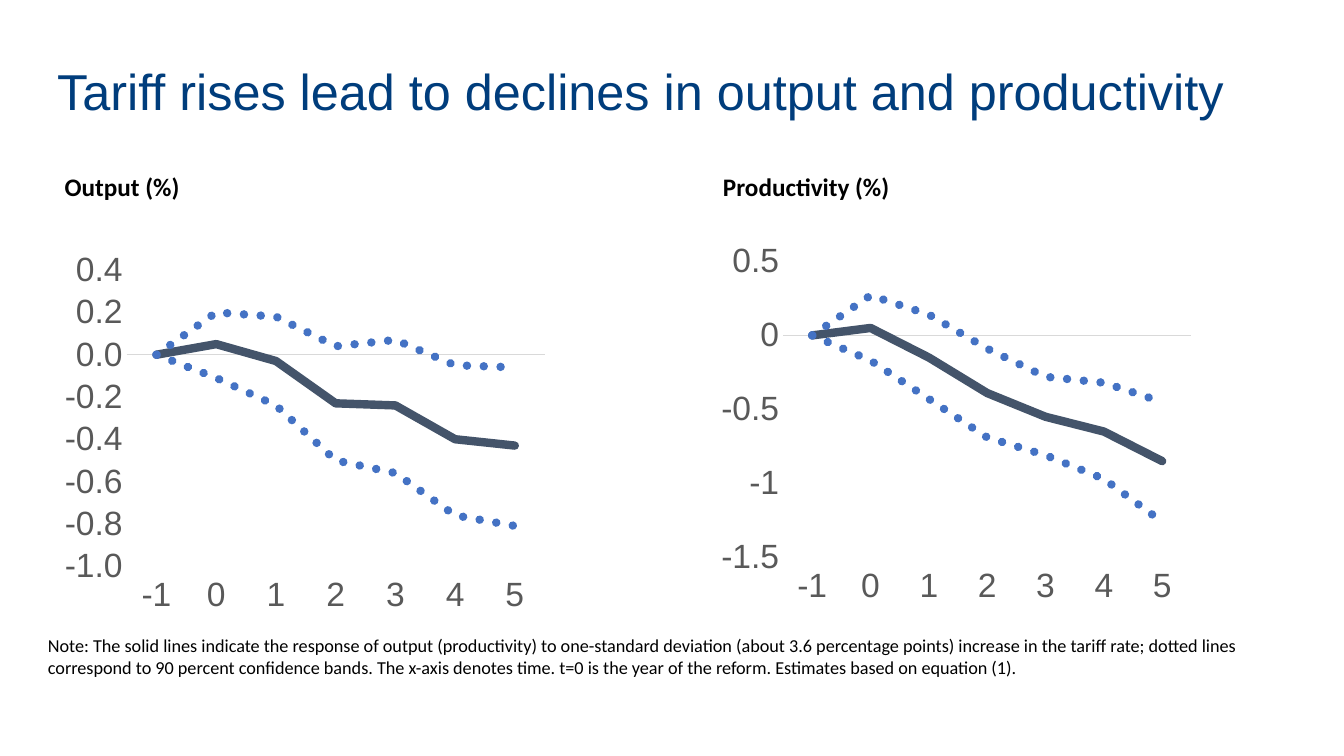
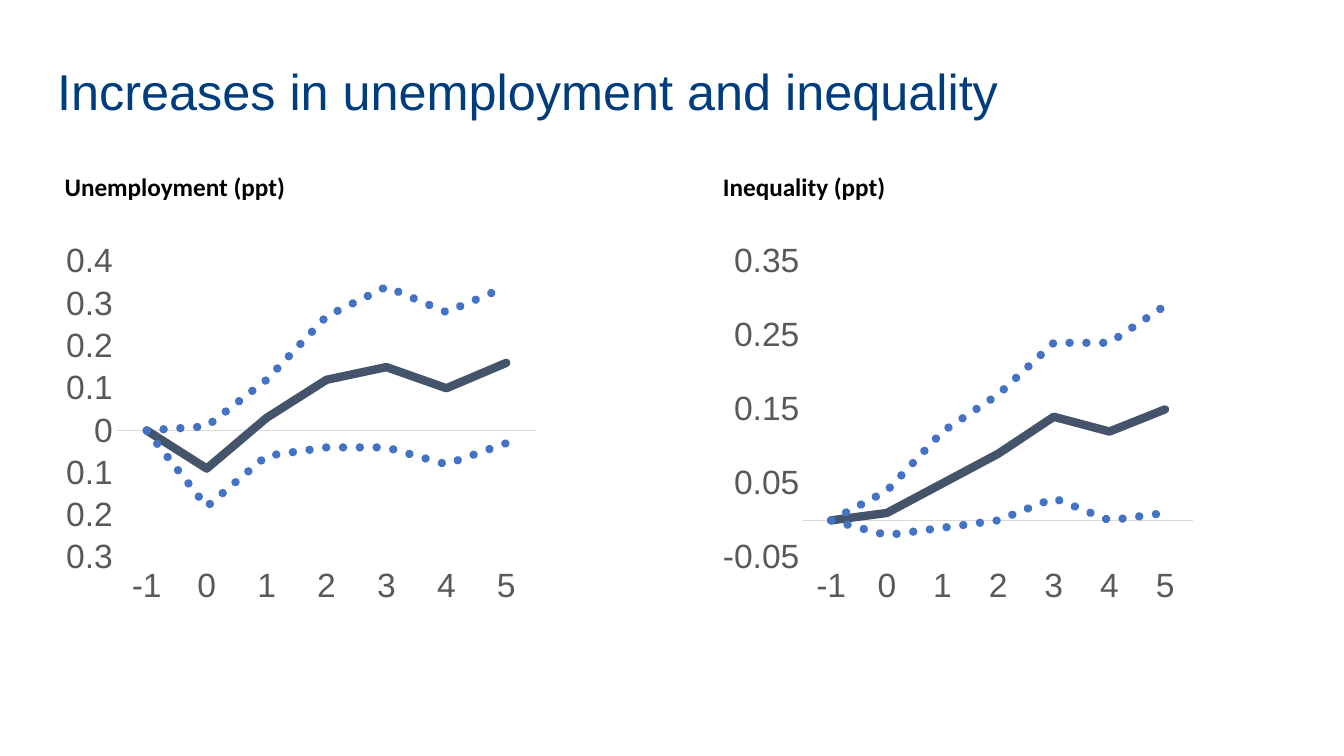
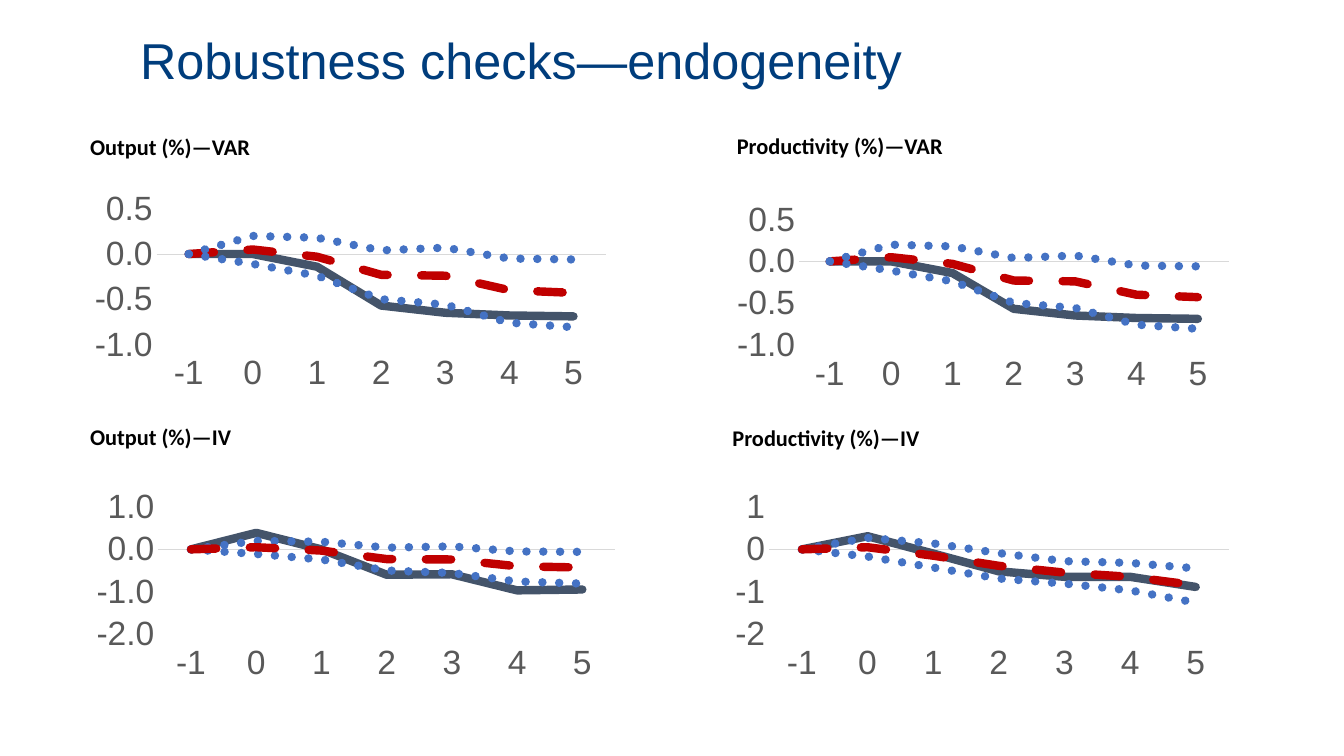
from pptx import Presentation
from pptx.chart.data import CategoryChartData
from pptx.dml.color import RGBColor
from pptx.enum.chart import XL_CHART_TYPE, XL_TICK_LABEL_POSITION, XL_TICK_MARK
from pptx.enum.dml import MSO_LINE
from pptx.enum.text import MSO_ANCHOR, MSO_AUTO_SIZE, PP_ALIGN
from pptx.oxml.ns import qn
from pptx.util import Cm, Pt

NAVY = RGBColor(0x00, 0x3D, 0x7C)
BLACK = RGBColor(0x00, 0x00, 0x00)
GREY = RGBColor(0x59, 0x59, 0x59)
LIGHT_GREY = RGBColor(0xD9, 0xD9, 0xD9)
SLATE = RGBColor(0x44, 0x54, 0x6A)
BLUE = RGBColor(0x44, 0x72, 0xC4)
RED = RGBColor(0xC0, 0x00, 0x00)

YEARS = ["-1", "0", "1", "2", "3", "4", "5"]
LINE_STYLES = {
    "Response": (SLATE, None),
    "Baseline": (RED, MSO_LINE.DASH),
    "Lower band": (BLUE, MSO_LINE.ROUND_DOT),
    "Upper band": (BLUE, MSO_LINE.ROUND_DOT),
}
ONE_DECIMAL = "#,##0.0"
GENERAL = "General"
PLAIN_ZERO = "[>0.01]0.0;[>-0.01]0;0.0"

OUTPUT = [0, 0.05, -0.03, -0.23, -0.24, -0.4, -0.43]
OUTPUT_LOW = [0, -0.11, -0.24, -0.5, -0.56, -0.76, -0.81]
OUTPUT_HIGH = [0, 0.2, 0.18, 0.04, 0.07, -0.05, -0.06]
PRODUCTIVITY = [0, 0.05, -0.15, -0.39, -0.55, -0.65, -0.85]
PRODUCTIVITY_LOW = [0, -0.17, -0.43, -0.69, -0.81, -0.97, -1.26]
PRODUCTIVITY_HIGH = [0, 0.27, 0.14, -0.09, -0.28, -0.32, -0.45]

VAR_LINES = {
    "Response": [0, 0, -0.14, -0.57, -0.65, -0.68, -0.69],
    "Baseline": OUTPUT,
    "Upper band": OUTPUT_HIGH,
    "Lower band": OUTPUT_LOW,
}

LEFT_LABEL = (1.38, 4.19, 9.52, 1.02)
RIGHT_LABEL = (17.97, 4.19, 9.52, 1.02)
WIDE_TITLE = (1.19, 0.53, 31.47, 3.68)
TOP_TITLE = (0, 0, 33.87, 3.18)

PAGES = [
    ("Tariff rises lead to declines in output and productivity", WIDE_TITLE, 0.25, 18, [
        ("Output (%)", LEFT_LABEL, (1.38, 6.14, 12.6, 9.52), ONE_DECIMAL, (-1, 0.4, 0.2),
         {"Response": OUTPUT, "Lower band": OUTPUT_LOW, "Upper band": OUTPUT_HIGH}),
        ("Productivity (%)", RIGHT_LABEL, (17.93, 5.92, 12.34, 9.52), GENERAL, (-1.5, 0.5, 0.5),
         {"Response": PRODUCTIVITY, "Lower band": PRODUCTIVITY_LOW,
          "Upper band": PRODUCTIVITY_HIGH}),
    ]),
    ("Increases in unemployment and inequality", WIDE_TITLE, 0.25, 18, [
        ("Unemployment (ppt)", LEFT_LABEL, (1.42, 5.92, 12.34, 9.52), PLAIN_ZERO,
         (-0.3, 0.4, 0.1),
         {"Response": [0, -0.09, 0.03, 0.12, 0.15, 0.1, 0.16],
          "Lower band": [0, -0.18, -0.06, -0.04, -0.04, -0.08, -0.03],
          "Upper band": [0, 0.01, 0.12, 0.27, 0.34, 0.28, 0.34]}),
        ("Inequality (ppt)", RIGHT_LABEL, (17.97, 5.92, 12.34, 9.52), GENERAL, (-0.05, 0.35, 0.1),
         {"Response": [0, 0.01, 0.05, 0.09, 0.14, 0.12, 0.15],
          "Lower band": [0, -0.02, -0.01, 0, 0.03, 0, 0.01],
          "Upper band": [0, 0.04, 0.12, 0.17, 0.24, 0.24, 0.29]}),
    ]),
    ("Robustness checks—endogeneity", TOP_TITLE, 3.53, 16, [
        ("Output (%)—VAR", (2.02, 3.23, 14.27, 0.94), (2.12, 4.68, 13.41, 5.31),
         ONE_DECIMAL, (-1, 0.5, 0.5), VAR_LINES),
        ("Productivity (%)—VAR", (18.32, 3.2, 14.6, 0.94), (18.32, 4.96, 12.9, 5.03),
         ONE_DECIMAL, (-1, 0.5, 0.5), VAR_LINES),
        ("Output (%)—IV", (2.02, 10.54, 9.52, 0.94), (2.16, 12.2, 13.61, 5.08),
         ONE_DECIMAL, (-2, 1, 1),
         {"Response": [0, 0.39, 0, -0.6, -0.59, -0.97, -0.95],
          "Lower band": OUTPUT_LOW, "Upper band": OUTPUT_HIGH, "Baseline": OUTPUT}),
        ("Productivity (%)—IV", (18.21, 10.57, 13.44, 0.94), (18.27, 12.2, 12.95, 5.08),
         GENERAL, (-2, 1, 1),
         {"Response": [0, 0.31, -0.1, -0.52, -0.65, -0.65, -0.89],
          "Lower band": PRODUCTIVITY_LOW, "Upper band": PRODUCTIVITY_HIGH,
          "Baseline": PRODUCTIVITY}),
    ]),
]

NOTE = (
    "Note: The solid lines indicate the response of output (productivity) to one-standard "
    "deviation (about 3.6 percentage points) increase in the tariff rate; dotted lines "
    "correspond to 90 percent confidence bands. The x-axis denotes time. t=0 is the year "
    "of the reform. Estimates based on equation (1)."
)


def add_text(page, text, place, size, bold=False):
    box = page.shapes.add_textbox(*map(Cm, place))
    box.text_frame.word_wrap = True
    para = box.text_frame.paragraphs[0]
    para.text = text
    para.font.name = "Calibri"
    para.font.size = Pt(size)
    para.font.bold = bold
    para.font.color.rgb = BLACK


def add_line_chart(page, place, number_format, scale, lines):
    data = CategoryChartData()
    data.categories = YEARS
    for name, values in lines.items():
        data.add_series(name, values)
    chart = page.shapes.add_chart(XL_CHART_TYPE.LINE, *map(Cm, place), data).chart
    chart.has_legend = False
    chart.has_title = False
    chart.font.name = "Arial"
    chart.font.size = Pt(24)
    chart.font.color.rgb = GREY
    chart.plots[0].vary_by_categories = False

    years = chart.category_axis
    years.tick_label_position = XL_TICK_LABEL_POSITION.LOW
    years.format.line.color.rgb = LIGHT_GREY
    years.format.line.width = Pt(0.75)

    levels = chart.value_axis
    levels.minimum_scale, levels.maximum_scale, levels.major_unit = scale
    levels.tick_labels.number_format = number_format
    levels.tick_labels.number_format_is_linked = False
    levels.format.line.fill.background()

    for axis in (years, levels):
        axis.has_major_gridlines = False
        axis.major_tick_mark = XL_TICK_MARK.NONE
        axis.minor_tick_mark = XL_TICK_MARK.NONE

    for series in chart.plots[0].series:
        color, dash = LINE_STYLES[series.name]
        series.smooth = False
        line = series.format.line
        line.color.rgb = color
        line.width = Pt(6)
        if dash:
            line.dash_style = dash
        outline = next(series.format.line._ln.iter(qn("a:ln")))
        outline.set("cap", "rnd")
        outline.append(outline.makeelement(qn("a:round"), {}))


deck = Presentation()
deck.slide_width = Cm(33.87)
deck.slide_height = Cm(19.05)

for heading, title_place, title_inset, label_size, panels in PAGES:
    page = deck.slides.add_slide(deck.slide_layouts[5])
    title = page.shapes.title
    title.left, title.top, title.width, title.height = map(Cm, title_place)
    frame = title.text_frame
    frame.text = heading
    frame.word_wrap = True
    frame.auto_size = MSO_AUTO_SIZE.NONE
    frame.vertical_anchor = MSO_ANCHOR.MIDDLE
    frame.margin_left = Cm(title_inset)
    para = frame.paragraphs[0]
    para.alignment = PP_ALIGN.LEFT
    para.line_spacing = 0.9
    para.font.name = "Arial"
    para.font.size = Pt(36)
    para.font.color.rgb = NAVY

    for label, label_place, chart_place, number_format, scale, lines in panels:
        add_text(page, label, label_place, label_size, bold=True)
        add_line_chart(page, chart_place, number_format, scale, lines)

add_text(deck.slides[0], NOTE, (0.96, 15.87, 31.75, 1.37), 13)

deck.save("out.pptx")
